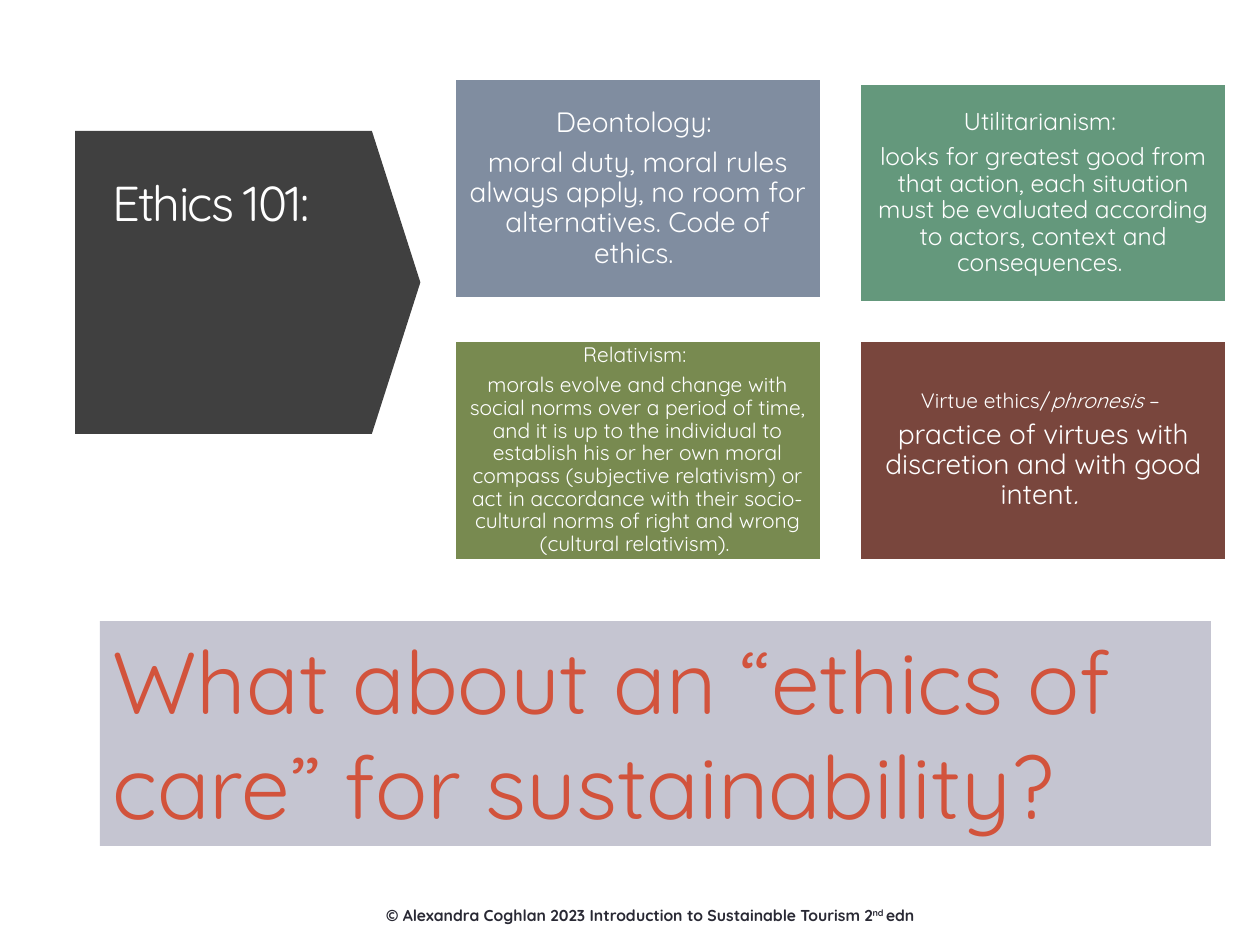
from pptx import Presentation
from pptx.dml.color import RGBColor
from pptx.enum.shapes import MSO_SHAPE
from pptx.enum.text import MSO_ANCHOR, PP_ALIGN
from pptx.util import Pt

FONT = "Quicksand"
WHITE = RGBColor(0xFF, 0xFF, 0xFF)
CHARCOAL = RGBColor(0x40, 0x40, 0x40)
INK = RGBColor(0x29, 0x29, 0x34)
SLATE = RGBColor(0x80, 0x8D, 0xA0)
GREEN = RGBColor(0x64, 0x98, 0x7C)
OLIVE = RGBColor(0x78, 0x8A, 0x50)
BROWN = RGBColor(0x79, 0x46, 0x3D)
LILAC = RGBColor(0xC5, 0xC5, 0xD1)
RED = RGBColor(0xD2, 0x53, 0x3C)

TITLE = "Ethics 101:"
QUESTION = "What about an “ethics of care” for sustainability?"
FOOTER = [("© Alexandra Coghlan 2023 Introduction to Sustainable Tourism 2", 0),
          ("nd ", 30000), ("edn", 0)]

# Per theory: fill, top offset, inset, paragraphs of (size, [(text, italic)])
THEORIES = [
    (SLATE, 0, 5, [
        (16, [("Deontology: ", False)]),
        (16, [("moral duty, moral rules always apply, no room for alternatives. "
               "Code of ethics. ", False)])]),
    (GREEN, 2.5, 4.4, [
        (14, [("Utilitarianism: ", False)]),
        (14, [("looks for greatest good from that action, each situation must be "
               "evaluated according to actors, context and consequences. ", False)])]),
    (OLIVE, 0, 3.8, [
        (12, [("Relativism: ", False)]),
        (12, [("morals evolve and change with social norms over a period of time, "
               "and it is up to the individual to establish his or her own moral "
               "compass (subjective relativism) or act in accordance with their "
               "socio-cultural norms of right and wrong (cultural relativism). ",
               False)])]),
    (BROWN, 0, 3.8, [
        (12, [("Virtue ethics/", False), ("phronesis", True), (" – ", False)]),
        (16, [("practice of virtues with discretion and with good intent", False),
              (". ", True)])]),
]
GRID_LEFT, GRID_TOP = 259.4, 44.8
CARD_W, CARD_H = 210, 126
COL_STEP, ROW_STEP = 231.8, 149.6


def add_run(paragraph, words, size, color, bold=False, italic=False):
    run = paragraph.add_run()
    run.text = words
    font = run.font
    font.name, font.size, font.bold, font.italic = FONT, Pt(size), bold, italic
    font.color.rgb = color
    return run


def add_filled(slide, preset, box, fill):
    shape = slide.shapes.add_shape(preset, *map(Pt, box))
    shape.shadow.inherit = False
    shape.fill.solid()
    shape.fill.fore_color.rgb = fill
    shape.line.fill.background()
    return shape


def add_text_box(slide, box):
    frame = slide.shapes.add_textbox(*map(Pt, box)).text_frame
    frame.word_wrap = True
    return frame


def add_card(slide, index, fill, offset, inset, paragraphs):
    row, col = divmod(index, 2)
    card = add_filled(slide, MSO_SHAPE.RECTANGLE,
                      (GRID_LEFT + col * COL_STEP,
                       GRID_TOP + row * ROW_STEP + offset, CARD_W, CARD_H), fill)
    card.line.color.rgb = WHITE
    card.line.width = Pt(2.08)
    frame = card.text_frame
    frame.word_wrap = True
    frame.vertical_anchor = MSO_ANCHOR.MIDDLE
    frame.margin_left = frame.margin_right = Pt(inset)
    frame.margin_top = frame.margin_bottom = Pt(inset)
    for i, (size, runs) in enumerate(paragraphs):
        paragraph = frame.add_paragraph() if i else frame.paragraphs[0]
        paragraph.alignment = PP_ALIGN.CENTER
        paragraph.line_spacing = 0.9
        paragraph.space_after = Pt(round(size * 0.35, 1))
        for words, italic in runs:
            add_run(paragraph, words, size, WHITE, italic=italic)


def main():
    deck = Presentation()
    deck.slide_width, deck.slide_height = Pt(720), Pt(540)
    slide = deck.slides.add_slide(deck.slide_layouts[6])

    footer = add_text_box(slide, (201.6, 514, 340, 18)).paragraphs[0]
    footer.alignment = PP_ALIGN.CENTER
    for words, baseline in FOOTER:
        run = add_run(footer, words, 9, INK, bold=True)
        if baseline:
            run.font._element.set("baseline", str(baseline))

    arrow = add_filled(slide, MSO_SHAPE.DOWN_ARROW, (55, 62.7, 173.2, 197.3), CHARCOAL)
    arrow.rotation = 270
    arrow.adjustments[0], arrow.adjustments[1] = 1, 0.16
    title = add_text_box(slide, (57, 95, 158, 140)).paragraphs[0]
    add_run(title, TITLE, 28, WHITE).font._element.set("spc", "-100")

    for index, theory in enumerate(THEORIES):
        add_card(slide, index, *theory)

    banner = add_filled(slide, MSO_SHAPE.RECTANGLE, (57, 355, 635, 128.4), LILAC)
    banner.text_frame.word_wrap = True
    banner.text_frame.vertical_anchor = MSO_ANCHOR.TOP
    question = banner.text_frame.paragraphs[0]
    question.alignment = PP_ALIGN.LEFT
    add_run(question, QUESTION, 50, RED)

    deck.save("out.pptx")


if __name__ == "__main__":
    main()
